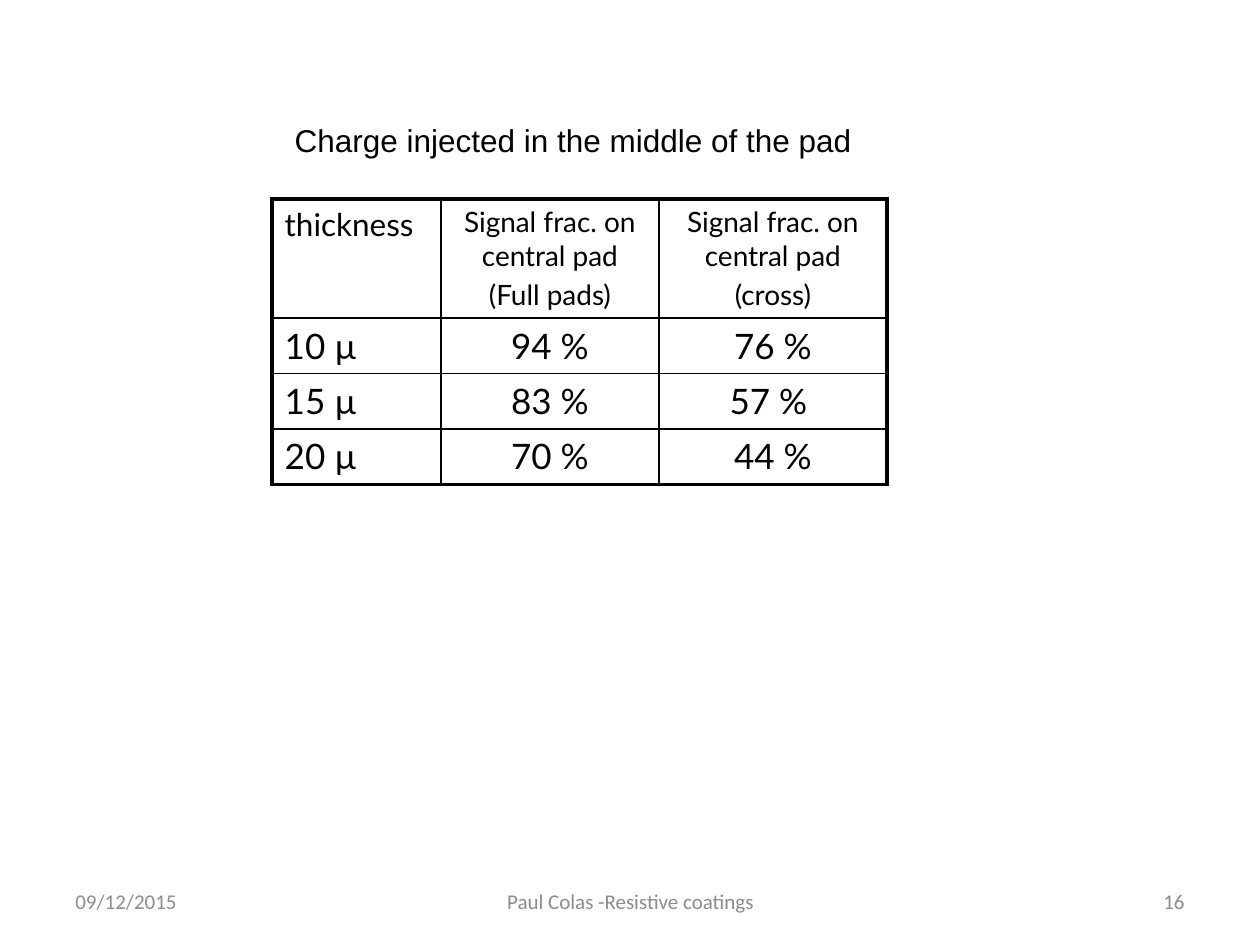
import dataclasses
import typing

import lxml.etree
import pptx
import pptx.dml.color
import pptx.enum.text
import pptx.oxml.ns
import pptx.util

Inches, Pt = pptx.util.Inches, pptx.util.Pt
ALIGN = pptx.enum.text.PP_ALIGN
ANCHOR = pptx.enum.text.MSO_ANCHOR


@dataclasses.dataclass(frozen=True)
class Theme:
    ink: str = "000000"
    muted: str = "8C8C8C"
    heading_font: str = "Arial"
    table_font: str = "Lato"
    footer_font: str = "Calibri"
    heading_size: float = 18
    label_size: float = 18
    header_size: float = 16
    value_size: float = 20
    footer_size: float = 12
    outer_line: float = 2.25
    inner_line: float = 1


class Footer(typing.NamedTuple):
    text: str
    left: float
    width: float
    align: ALIGN


THEME = Theme()
FOOTERS = [
    Footer("09/12/2015", 0.5, 2.33, ALIGN.LEFT),
    Footer("Paul Colas -Resistive coatings", 3.42, 3.17, ALIGN.CENTER),
    Footer("16", 7.17, 2.33, ALIGN.RIGHT),
]
ROWS = [
    ("thickness", "Signal frac. on central pad\n(Full pads)",
     "Signal frac. on central pad\n(cross)"),
    ("10 µ", "94 %", "76 %"),
    ("15 µ", "83 %", "57 % "),
    ("20 µ", "70 %", "44 %"),
]
COL_WIDTHS = [1.34, 1.73, 1.81]
ROW_HEIGHTS = [0.94, 0.44, 0.44, 0.44]


def write(tf, text: str, *, font: str, size: float, color: str = THEME.ink,
          align: ALIGN = ALIGN.LEFT) -> None:
    """Write one paragraph per line, spaced by a fifth of the type size."""
    for i, line in enumerate(text.split("\n")):
        p = tf.add_paragraph() if i else tf.paragraphs[0]
        p.alignment = align
        p.space_before = Pt(0.2 * size if i else 0)
        r = p.add_run()
        r.text = line
        r.font.name = font
        r.font.size = Pt(size)
        r.font.color.rgb = pptx.dml.color.RGBColor.from_string(color)


def add_text(s, text: str, left: float, top: float, width: float, height: float,
             *, anchor: ANCHOR = ANCHOR.TOP, **fmt) -> None:
    sp = s.shapes.add_textbox(Inches(left), Inches(top), Inches(width), Inches(height))
    tf = sp.text_frame
    tf.word_wrap = True
    tf.vertical_anchor = anchor
    write(tf, text, **fmt)


def set_borders(cell, widths: dict[str, float]) -> None:
    """Give the cell's sides (L, R, T, B in this order) their line widths."""
    qn = pptx.oxml.ns.qn
    tc_pr = cell._tc.get_or_add_tcPr()
    for i, (side, width) in enumerate(widths.items()):
        ln = lxml.etree.Element(qn(f"a:ln{side}"), w=str(Pt(width)))
        fill = lxml.etree.SubElement(ln, qn("a:solidFill"))
        lxml.etree.SubElement(fill, qn("a:srgbClr"), val=THEME.ink)
        tc_pr.insert(i, ln)


def add_results(s, left: float, top: float) -> None:
    table = s.shapes.add_table(
        len(ROWS), len(COL_WIDTHS), Inches(left), Inches(top),
        Inches(sum(COL_WIDTHS)), Inches(sum(ROW_HEIGHTS))).table
    table.first_row = table.horz_banding = False
    for col, width in zip(table.columns, COL_WIDTHS):
        col.width = Inches(width)
    for row, height in zip(table.rows, ROW_HEIGHTS):
        row.height = Inches(height)

    last_row, last_col = len(ROWS) - 1, len(COL_WIDTHS) - 1
    for i, row in enumerate(ROWS):
        for j, text in enumerate(row):
            cell = table.cell(i, j)
            cell.fill.background()
            edges = {"L": j == 0, "R": j == last_col, "T": i == 0, "B": i == last_row}
            set_borders(cell, {side: THEME.outer_line if outer else THEME.inner_line
                               for side, outer in edges.items()})
            head_size = THEME.header_size if j else THEME.label_size
            write(cell.text_frame, text, font=THEME.table_font,
                  size=THEME.value_size if i else head_size,
                  align=ALIGN.CENTER if j else ALIGN.LEFT)


def main() -> None:
    prs = pptx.Presentation()
    prs.slide_width, prs.slide_height = Inches(10), Inches(7.5)
    s = prs.slides.add_slide(prs.slide_layouts[6])

    # Footer line
    for f in FOOTERS:
        add_text(s, f.text, f.left, 6.95, f.width, 0.4, anchor=ANCHOR.MIDDLE,
                 font=THEME.footer_font, size=THEME.footer_size,
                 color=THEME.muted, align=f.align)

    # Table of signal fractions and its heading
    add_results(s, 2.16, 1.58)
    add_text(s, "Charge injected in the middle of the pad", 2.24, 0.91, 4.73, 0.4,
             font=THEME.heading_font, size=THEME.heading_size)

    prs.save("out.pptx")


if __name__ == "__main__":
    main()
